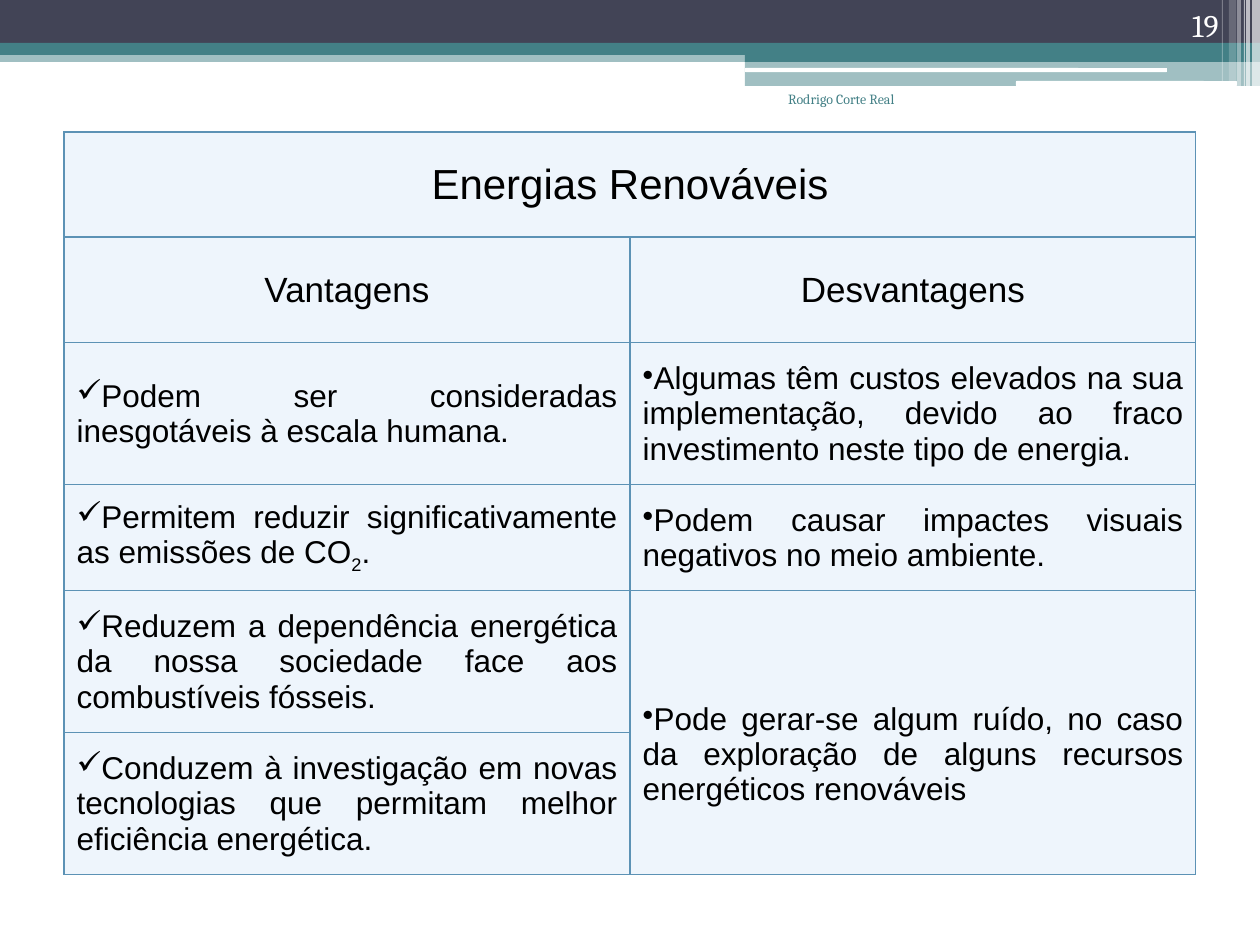
from pptx import Presentation
from pptx import util as u
from pptx.dml.color import RGBColor
from pptx.enum import shapes, text
from pptx.oxml.ns import qn
from lxml import etree

PX = 914400 / 126
NAVY, TEAL, WHITE, BLACK = "424456", "438086", "FFFFFF", "000000"
CELL_FILL, BORDER = "EEF5FC", "5C92B5"

# left, top, width, height, colour, opacity in percent
BARS = [
    (0, 50, 1260, 12, TEAL, 50),
    (0, 0, 1260, 43, NAVY, 100),
    (0, 43, 1260, 12, TEAL, 100),
    (745, 49, 515, 13, TEAL, 100),
    (745, 61, 515, 25, TEAL, 50),
]
ROUND_BARS = [
    (745, 68, 422, 4, WHITE, 100),
    (1016, 81, 221, 5, WHITE, 100),
]
# left, width, height, opacity in percent
STRIPES = [
    (1252, 8, 86, 65),
    (1246, 4, 86, 65),
    (1244, 1, 86, 60),
    (1237, 4, 86, 40),
    (1229, 7, 81, 20),
    (1222, 1, 81, 30),
]

TITLE = "Energias Renováveis"
HEADINGS = ("Vantagens", "Desvantagens")
# each item is a list of runs; the subscript is the run "2"
ADVANTAGES = [
    ["Podem ser consideradas inesgotáveis à escala humana."],
    ["Permitem reduzir significativamente as emissões de CO", "2", "."],
    ["Reduzem a dependência energética da nossa sociedade face aos combustíveis fósseis."],
    ["Conduzem à investigação em novas tecnologias que permitam melhor eficiência energética."],
]
DISADVANTAGES = [
    ["Algumas têm custos elevados na sua implementação, devido ao fraco investimento neste tipo de energia."],
    ["Podem causar impactes visuais negativos no meio ambiente."],
    ["Pode gerar-se algum ruído, no caso da exploração de alguns recursos energéticos renováveis"],
]
TABLE_LEFT, TABLE_TOP, COL_WIDTH = 64, 132, 566
ROW_HEIGHTS = (105, 106, 142, 106, 142, 142)


def px(n):
    return u.Emu(round(n * PX))


def box(*lengths):
    return [px(n) for n in lengths]


def rgb(hex_colour):
    return RGBColor.from_string(hex_colour)


def add_bar(slide, kind, left, top, width, height, colour, opacity):
    sp = slide.shapes.add_shape(kind, *box(left, top, width, height))
    sp.shadow.inherit = False
    sp.line.fill.background()
    sp.fill.solid()
    sp.fill.fore_color.rgb = rgb(colour)
    if opacity < 100:
        clr = sp.fill._xPr.find(".//" + qn("a:srgbClr"))
        etree.SubElement(clr, qn("a:alpha"), val=str(opacity * 1000))


def write(p, runs, size, font, colour, align):
    p.alignment = align
    for words in runs:
        r = p.add_run()
        r.text = words
        r.font.size = u.Pt(size)
        r.font.name = font
        r.font.color.rgb = rgb(colour)
        if words == "2":
            r._r.get_or_add_rPr().set("baseline", "-25000")


def add_label(slide, words, lengths, size, colour, anchor):
    tf = slide.shapes.add_textbox(*box(*lengths)).text_frame
    tf.word_wrap = True
    tf.vertical_anchor = anchor
    write(tf.paragraphs[0], [words], size, "Cambria", colour, text.PP_ALIGN.RIGHT)


def style_cell(cell):
    cell.vertical_anchor = text.MSO_ANCHOR.MIDDLE
    cell.fill.solid()
    cell.fill.fore_color.rgb = rgb(CELL_FILL)
    tc_pr = cell._tc.get_or_add_tcPr()
    for i, side in enumerate(("lnL", "lnR", "lnT", "lnB")):
        ln = etree.Element(qn("a:" + side), w=str(u.Pt(0.75)))
        fill = etree.SubElement(ln, qn("a:solidFill"))
        etree.SubElement(fill, qn("a:srgbClr"), val=BORDER)
        tc_pr.insert(i, ln)


def write_heading(cell, words, size):
    write(cell.text_frame.paragraphs[0], [words], size, "Arial", BLACK, text.PP_ALIGN.CENTER)


def write_item(cell, runs, bullet):
    p = cell.text_frame.paragraphs[0]
    write(p, runs, 18, "Arial", BLACK, text.PP_ALIGN.JUSTIFY)
    p_pr = p._p.get_or_add_pPr()
    p_pr.set("marL", "0")
    p_pr.set("indent", "0")
    etree.SubElement(p_pr, qn("a:buChar"), char=bullet)


def add_comparison(slide):
    frame = slide.shapes.add_table(
        len(ROW_HEIGHTS), 2, *box(TABLE_LEFT, TABLE_TOP, 2 * COL_WIDTH, sum(ROW_HEIGHTS)))
    table = frame.table
    table.first_row = table.horz_banding = False
    for col in table.columns:
        col.width = px(COL_WIDTH)
    for row, height in zip(table.rows, ROW_HEIGHTS):
        row.height = px(height)
    for cell in table.iter_cells():
        style_cell(cell)

    table.cell(0, 0).merge(table.cell(0, 1))
    table.cell(4, 1).merge(table.cell(5, 1))
    table.cell(4, 1).margin_top = px(50)

    write_heading(table.cell(0, 0), TITLE, 24)
    for c, (heading, items, bullet) in enumerate(
            zip(HEADINGS, (ADVANTAGES, DISADVANTAGES), "✓•")):
        write_heading(table.cell(1, c), heading, 20)
        for r, runs in enumerate(items, 2):
            write_item(table.cell(r, c), runs, bullet)


def main():
    prs = Presentation()
    prs.slide_width, prs.slide_height = u.Inches(10), u.Inches(7.5)
    slide = prs.slides.add_slide(prs.slide_layouts[6])
    kinds = shapes.MSO_SHAPE
    for bar in BARS:
        add_bar(slide, kinds.RECTANGLE, *bar)
    for bar in ROUND_BARS:
        add_bar(slide, kinds.ROUNDED_RECTANGLE, *bar)
    for left, width, height, opacity in STRIPES:
        add_bar(slide, kinds.RECTANGLE, left, 0, width, height, WHITE, opacity)
    add_comparison(slide)
    add_label(slide, "19", (1126, 0, 105, 50), 18, WHITE, text.MSO_ANCHOR.BOTTOM)
    add_label(slide, "Rodrigo Corte Real", (725, 84, 182, 63), 8, TEAL, text.MSO_ANCHOR.TOP)
    prs.save("out.pptx")


if __name__ == "__main__":
    main()
